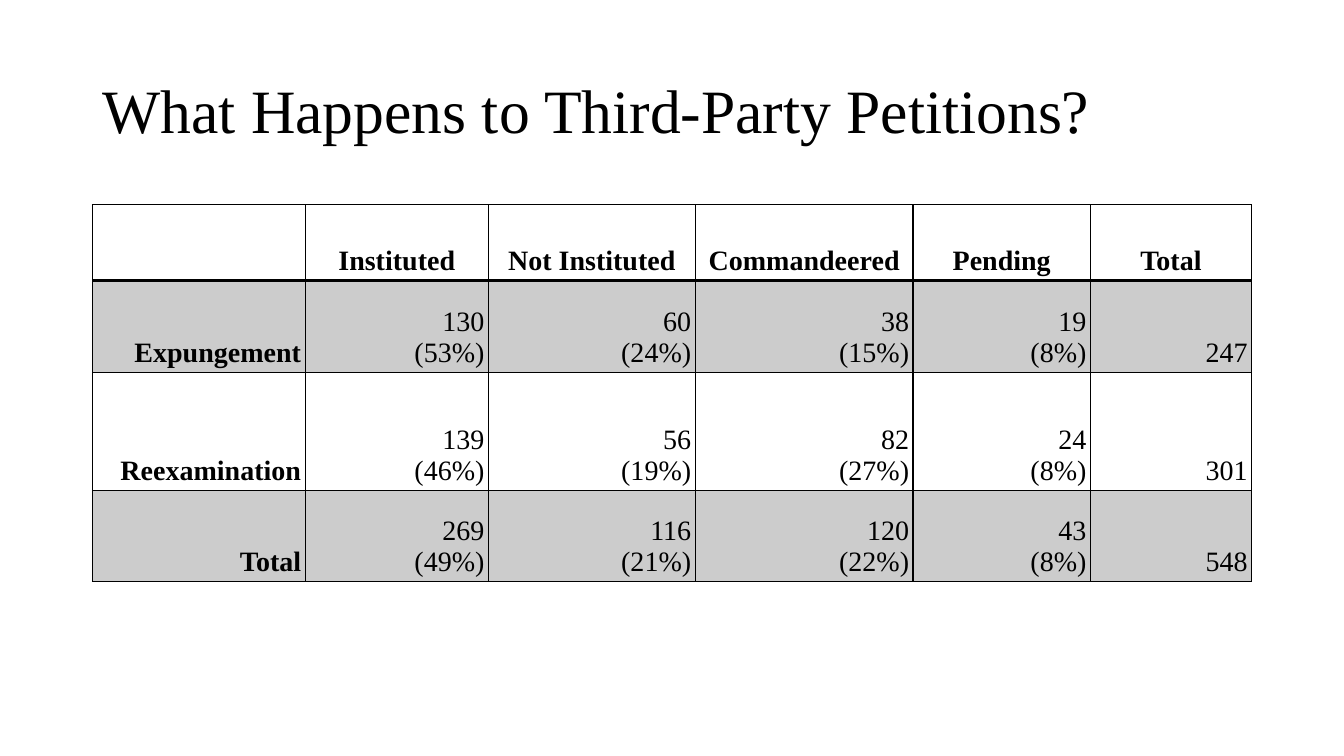
import dataclasses

import lxml.etree
import pptx
import pptx.dml.color
import pptx.enum.text
import pptx.oxml.ns
import pptx.util

Cm, Pt = pptx.util.Cm, pptx.util.Pt
ALIGN = pptx.enum.text.PP_ALIGN
ANCHOR = pptx.enum.text.MSO_ANCHOR
qn = pptx.oxml.ns.qn


@dataclasses.dataclass(frozen=True)
class Theme:
    font: str = "Times New Roman"
    ink: str = "000000"
    band_alpha: int = 20
    title_size: int = 44
    table_size: int = 20
    rule: int = 1
    header_rule: int = 2
    inset: float = 0.1


THEME = Theme()
TITLE = "What Happens to Third-Party Petitions?"
COLUMN_WIDTHS = [5.36, 4.62, 5.21, 5.49, 4.47, 4.06]
ROW_HEIGHTS = [1.91, 2.31, 2.97, 2.31]
PETITIONS = [
    ["", "Instituted", "Not Instituted", "Commandeered", "Pending", "Total"],
    ["Expungement", "130\n(53%)", "60\n(24%)", "38\n(15%)", "19\n(8%)", "247"],
    ["Reexamination", "139\n(46%)", "56\n(19%)", "82\n(27%)", "24\n(8%)", "301"],
    ["Total", "269\n(49%)", "116\n(21%)", "120\n(22%)", "43\n(8%)", "548"],
]


def write(tf, text, size, bold=False, align=ALIGN.LEFT, spacing=1.0):
    """Fill a text frame, one paragraph per line of text."""
    for i, line in enumerate(text.split("\n")):
        p = tf.add_paragraph() if i else tf.paragraphs[0]
        p.alignment = align
        p.line_spacing = spacing
        r = p.add_run()
        r.text = line
        r.font.name = THEME.font
        r.font.size = Pt(size)
        r.font.bold = bold
        r.font.color.rgb = pptx.dml.color.RGBColor.from_string(THEME.ink)


def add_solid_fill(parent):
    fill = lxml.etree.SubElement(parent, qn("a:solidFill"))
    return lxml.etree.SubElement(fill, qn("a:srgbClr"), val=THEME.ink)


def set_borders(cell, top, bottom):
    """Rule all four sides of a cell; call before setting its fill."""
    tcPr = cell._tc.get_or_add_tcPr()
    widths = {"L": THEME.rule, "R": THEME.rule, "T": top, "B": bottom}
    for side, width in widths.items():
        ln = lxml.etree.SubElement(tcPr, qn(f"a:ln{side}"), w=str(Pt(width)))
        add_solid_fill(ln)


def set_band(cell, shaded):
    if shaded:
        color = add_solid_fill(cell._tc.get_or_add_tcPr())
        lxml.etree.SubElement(color, qn("a:alpha"), val=str(THEME.band_alpha * 1000))
    else:
        cell.fill.background()


def format_title(s, left, top, width, height):
    sp = s.shapes.title
    sp.left, sp.top, sp.width, sp.height = Cm(left), Cm(top), Cm(width), Cm(height)
    tf = sp.text_frame
    tf.word_wrap = True
    tf.auto_size = pptx.enum.text.MSO_AUTO_SIZE.NONE
    tf.vertical_anchor = ANCHOR.MIDDLE
    write(tf, TITLE, THEME.title_size, spacing=0.9)


def format_cell(cell, text, row, col):
    cell.margin_left = cell.margin_right = Cm(THEME.inset)
    cell.margin_top = cell.margin_bottom = Cm(THEME.inset)
    cell.vertical_anchor = ANCHOR.BOTTOM
    set_borders(
        cell,
        top=THEME.header_rule if row == 1 else THEME.rule,
        bottom=THEME.header_rule if row == 0 else THEME.rule,
    )
    set_band(cell, shaded=row % 2 == 1)
    if text:
        write(
            cell.text_frame,
            text,
            THEME.table_size,
            bold=row == 0 or col == 0,
            align=ALIGN.RIGHT if row else ALIGN.CENTER,
        )


def add_petition_table(s, left, top, width, height):
    table = s.shapes.add_table(
        len(PETITIONS), len(COLUMN_WIDTHS), Cm(left), Cm(top), Cm(width), Cm(height)
    ).table
    table.first_row = table.horz_banding = False
    for column, share in zip(table.columns, COLUMN_WIDTHS):
        column.width = Cm(width * share / sum(COLUMN_WIDTHS))
    for row, share in zip(table.rows, ROW_HEIGHTS):
        row.height = Cm(height * share / sum(ROW_HEIGHTS))
    for i, values in enumerate(PETITIONS):
        for j, text in enumerate(values):
            format_cell(table.cell(i, j), text, i, j)


def main():
    prs = pptx.Presentation()
    prs.slide_width, prs.slide_height = Cm(33.87), Cm(19.05)
    s = prs.slides.add_slide(prs.slide_layouts[5])
    left, width = 2.33, 29.21
    format_title(s, left, 1.01, width, 3.68)
    add_petition_table(s, left, 5.16, width, 9.5)
    prs.save("out.pptx")


if __name__ == "__main__":
    main()
